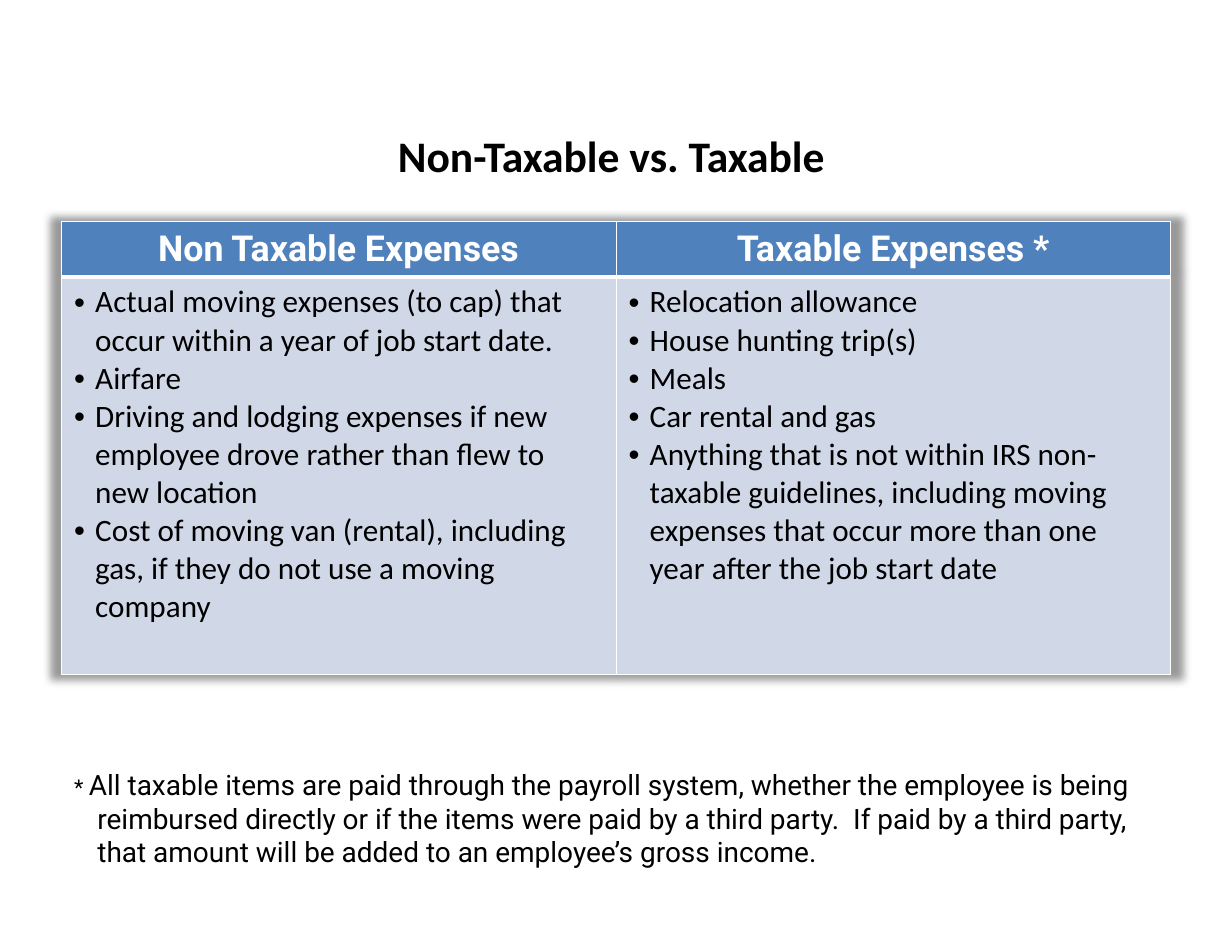
from lxml.etree import SubElement as Sub, Element
from pptx import Presentation
from pptx.dml.color import RGBColor
from pptx.enum.text import MSO_ANCHOR as Anchor, PP_ALIGN as Align
from pptx.oxml.ns import qn
from pptx.util import Cm, Pt


def color(code):
    return RGBColor.from_string(code)


def write(para, text, size, font, code="000000", bold=False):
    run = para.add_run()
    run.text = text
    run.font.size = Pt(size)
    run.font.name = font
    run.font.bold = bold
    run.font.color.rgb = color(code)


deck = Presentation()
deck.slide_width = Cm(27.94)
deck.slide_height = Cm(21.59)
slide = deck.slides.add_slide(deck.slide_layouts[6])
left, wide = Cm(1.4), Cm(25.15)
side, edge = Cm(0.28), Cm(0.14)

frames = []
for top, high in ((2.57, 1.88), (17.27, 2.59)):
    frame = slide.shapes.add_textbox(left, Cm(top), wide, Cm(high)).text_frame
    frame.word_wrap = True
    frame.margin_left = frame.margin_right = side
    frame.margin_top = frame.margin_bottom = edge
    frames.append(frame)
title, note = frames

title.vertical_anchor = Anchor.MIDDLE
para = title.paragraphs[0]
para.alignment = Align.CENTER
write(para, "Non-Taxable vs. Taxable ", 28, "Calibri", bold=True)

para = note.paragraphs[0]
props = para._p.get_or_add_pPr()
props.set("marL", str(Cm(0.53)))
props.set("indent", str(-Cm(0.53)))
write(para, "* ", 14, "Roboto")
write(para, "All taxable items are paid through the payroll system, whether the employee is being "
      "reimbursed directly or if the items were paid by a third party.  If paid by a third party, "
      "that amount will be added to an employee’s gross income.", 18, "Roboto")

lists = {
    "Non Taxable Expenses": [
        "Actual moving expenses (to cap) that occur within a year of job start date.",
        "Airfare",
        "Driving and lodging expenses if new employee drove rather than flew to new location",
        "Cost of moving van (rental), including gas, if they do not use a moving company",
    ],
    "Taxable Expenses *": [
        "Relocation allowance",
        "House hunting trip(s)",
        "Meals",
        "Car rental and gas",
        "Anything that is not within IRS non-taxable guidelines, including moving expenses "
        "that occur more than one year after the job start date",
    ],
}

table = slide.shapes.add_table(2, 2, left, Cm(5.03), wide, Cm(10.26)).table
table.rows[0].height = Cm(1.24)
table.rows[1].height = Cm(9.02)

glow = Element(qn("a:effectLst"))
shade = Sub(glow, qn("a:outerShdw"), blurRad=str(Pt(5)), sx="102000", sy="102000",
            algn="ctr", rotWithShape="0")
tint = Sub(shade, qn("a:srgbClr"), val="000000")
Sub(tint, qn("a:alpha"), val="40000")
table._tbl.tblPr.insert(0, glow)

for col, (head, items) in enumerate(lists.items()):
    table.columns[col].width = wide // 2
    for row, fill in enumerate(("4F81BD", "D0D8E8")):
        cell = table.cell(row, col)
        cell.margin_left = cell.margin_right = side
        cell.margin_top = cell.margin_bottom = edge
        props = cell._tc.get_or_add_tcPr()
        for name in ("lnL", "lnR", "lnT", "lnB"):
            thick = (row, name) in ((0, "lnB"), (1, "lnT"))
            line = Sub(props, qn("a:" + name), w=str(Pt(3 if thick else 1)))
            Sub(Sub(line, qn("a:solidFill")), qn("a:srgbClr"), val="FFFFFF")
        cell.fill.solid()
        cell.fill.fore_color.rgb = color(fill)
    para = table.cell(0, col).text_frame.paragraphs[0]
    para.alignment = Align.CENTER
    write(para, head, 23, "Roboto", "FFFFFF", True)
    body = table.cell(1, col).text_frame
    for num, item in enumerate(items):
        para = body.add_paragraph() if num else body.paragraphs[0]
        props = para._p.get_or_add_pPr()
        props.set("marL", str(Cm(0.48)))
        props.set("indent", str(-Cm(0.48)))
        Sub(props, qn("a:buFont"), typeface="Arial")
        Sub(props, qn("a:buChar"), char="•")
        write(para, item, 20, "Calibri")

deck.save("out.pptx")
